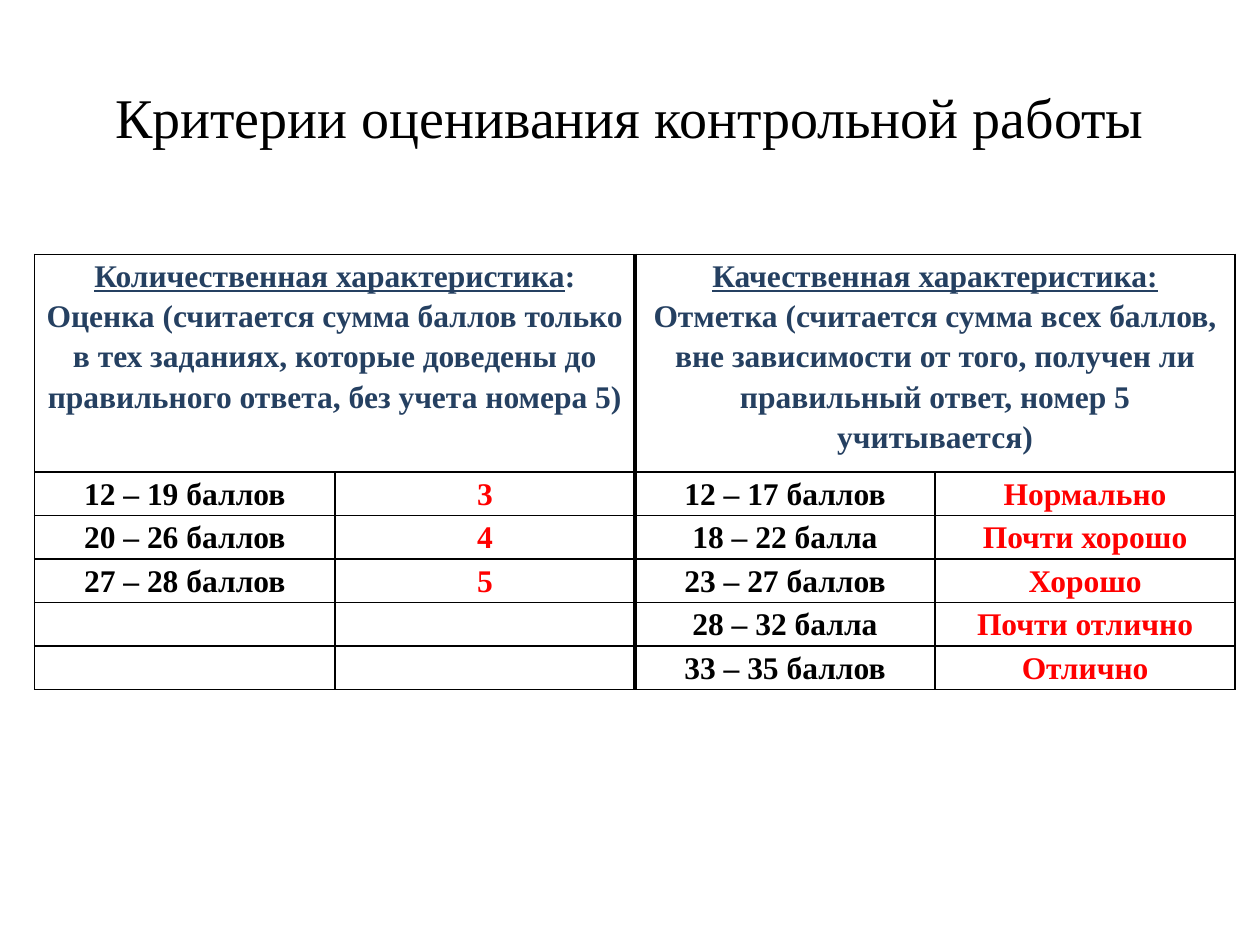
from lxml.etree import SubElement
from pptx import Presentation
from pptx.dml.color import RGBColor
from pptx.enum.text import MSO_ANCHOR as Anchor, PP_ALIGN as Align
from pptx.oxml.ns import qn
from pptx.util import Cm, Pt

BLACK = RGBColor(0, 0, 0)
RED = RGBColor(0xFF, 0, 0)
NAVY = RGBColor(0x25, 0x40, 0x61)
FONT = "Times New Roman"
THIN, THICK = Pt(1), Pt(2.25)

TITLE = "Критерии оценивания контрольной работы"
HEADS = [
    (0, "Количественная характеристика", ":",
     "Оценка (считается сумма баллов только в тех заданиях, которые доведены "
     "до правильного ответа, без учета номера 5)"),
    (2, "Качественная характеристика:", "",
     "Отметка (считается сумма всех баллов, вне зависимости от того, получен ли "
     "правильный ответ, номер 5 учитывается)"),
]
ROWS = [
    ("12 – 19 баллов", "3", "12 – 17 баллов", "Нормально"),
    ("20 – 26 баллов", "4", "18 – 22 балла", "Почти хорошо"),
    ("27 – 28 баллов", "5", "23 – 27 баллов", "Хорошо"),
    ("", "", "28 – 32 балла", "Почти отлично"),
    ("", "", "33 – 35 баллов", "Отлично"),
]


def style(frame, size, color, bold=False, space=None):
    for para in frame.paragraphs:
        para.alignment = Align.CENTER
        para.line_spacing = space
        for run in para.runs:
            font = run.font
            font.name, font.size, font.bold = FONT, Pt(size), bold
            font.color.rgb = color


def add_title(slide):
    box = slide.shapes.add_textbox(Cm(1.27), Cm(0.76), Cm(22.86), Cm(3.18))
    frame = box.text_frame
    frame.word_wrap = True
    frame.vertical_anchor = Anchor.MIDDLE
    frame.text = TITLE
    style(frame, 32, BLACK)


def set_edges(cell, left, right):
    props = cell._tc.get_or_add_tcPr()
    sides = [("L", left), ("R", right), ("T", THIN), ("B", THIN)]
    for spot, (side, width) in enumerate(sides):
        line = SubElement(props, qn("a:ln" + side), w=str(width))
        fill = SubElement(line, qn("a:solidFill"))
        SubElement(fill, qn("a:srgbClr"), val=str(BLACK))
        props.insert(spot, line)


def fill_head(cell, label, tail, note):
    frame = cell.text_frame
    frame.text = label
    first = frame.paragraphs[0]
    first.runs[0].font.underline = True
    if tail:
        first.add_run().text = tail
    frame.add_paragraph().text = note
    style(frame, 18, NAVY, True, 1.15)


def add_grid(slide):
    shape = slide.shapes.add_table(
        len(ROWS) + 1, 4, Cm(0.7), Cm(5.13), Cm(24.2), Cm(8.11))
    table = shape.table
    table.first_row = table.horz_banding = False
    for r, row in enumerate(table.rows):
        row.height = Cm(0.81 if r else 4.06)
        for c, cell in enumerate(row.cells):
            cell.margin_left = cell.margin_right = Cm(0.13)
            cell.margin_top = cell.margin_bottom = 0
            cell.fill.background()
            split = c == 1 or (r == 0 and c == 0)
            set_edges(cell, THICK if c == 2 else THIN, THICK if split else THIN)
            if r and ROWS[r - 1][c]:
                cell.text_frame.text = ROWS[r - 1][c]
                style(cell.text_frame, 18, RED if c % 2 else BLACK, True, 1.15)
    for col, label, tail, note in HEADS:
        cell = table.cell(0, col)
        cell.merge(table.cell(0, col + 1))
        fill_head(cell, label, tail, note)


def main():
    deck = Presentation()
    deck.slide_width, deck.slide_height = Cm(25.4), Cm(19.05)
    slide = deck.slides.add_slide(deck.slide_layouts[6])
    add_title(slide)
    add_grid(slide)
    deck.save("out.pptx")


if __name__ == "__main__":
    main()
